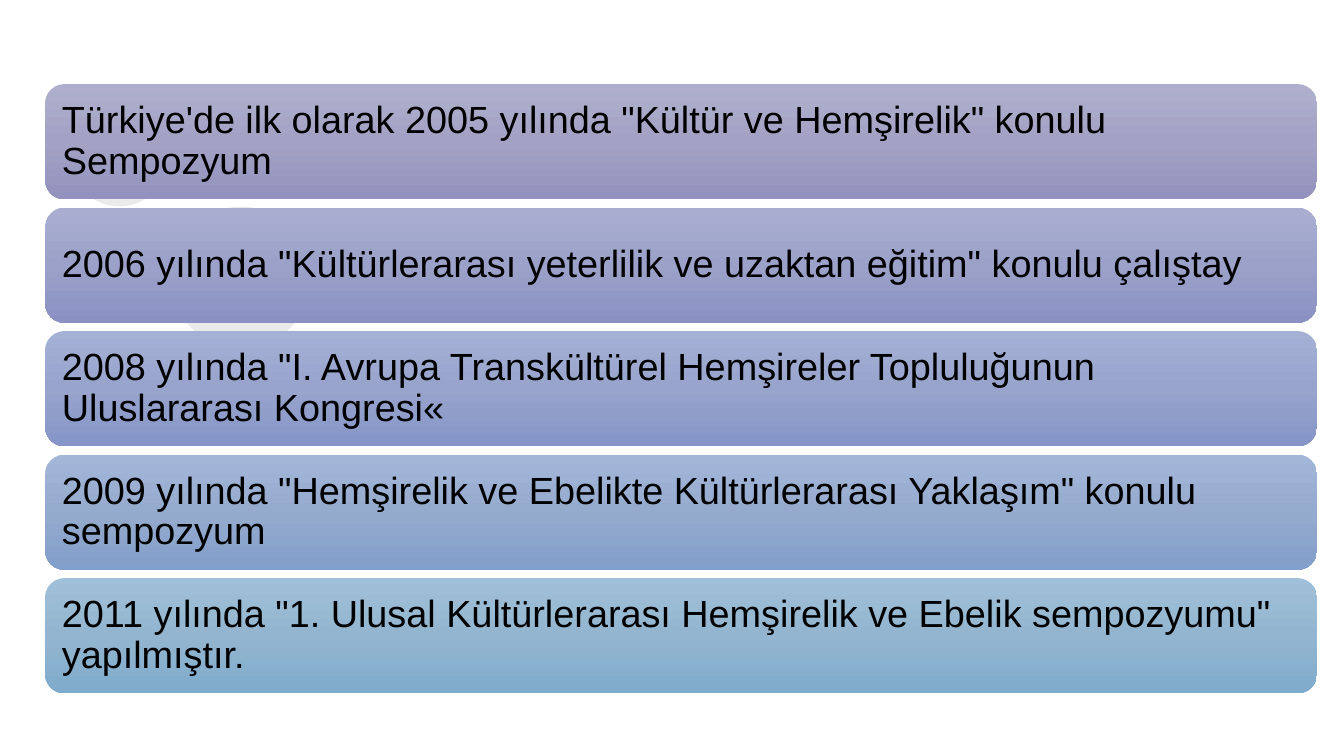
from copy import deepcopy
from dataclasses import dataclass

from pptx import Presentation
from pptx.dml.color import RGBColor
from pptx.enum.shapes import MSO_SHAPE as Shape
from pptx.enum.text import MSO_ANCHOR as Anchor, PP_ALIGN as Align
from pptx.oxml.ns import qn
from pptx.util import Cm, Pt


@dataclass(frozen=True)
class Theme:
    font: str = "Arial"
    text_size: float = 27
    text: str = "000000"
    circle: str = "EAEAEA"
    # Top, middle and bottom colour of each bar
    bars: tuple = (
        ("AFAFCD", "A3A2C4", "9392BE"),
        ("A9AED1", "9CA1C9", "8B91C3"),
        ("A5B0D5", "98A4CC", "8595C7"),
        ("A2B6D8", "95ABCD", "829ECA"),
        ("A0C0D9", "93B5CF", "7FABCC"),
    )


THEME = Theme()

EVENTS = (
    'Türkiye\'de ilk olarak 2005 yılında "Kültür ve Hemşirelik" konulu Sempozyum',
    '2006 yılında "Kültürlerarası yeterlilik ve uzaktan eğitim" konulu çalıştay',
    '2008 yılında "I. Avrupa Transkültürel Hemşireler Topluluğunun Uluslararası Kongresi«',
    '2009 yılında "Hemşirelik ve Ebelikte Kültürlerarası Yaklaşım" konulu sempozyum',
    '2011 yılında "1. Ulusal Kültürlerarası Hemşirelik ve Ebelik sempozyumu" yapılmıştır.',
)


def add_plain_shape(slide, kind, left, top, width, height):
    """Add a preset shape without outline or shadow; lengths in cm."""
    shape = slide.shapes.add_shape(kind, Cm(left), Cm(top), Cm(width), Cm(height))
    shape.shadow.inherit = False
    shape.line.fill.background()
    return shape


def fill_downward(shape, colours):
    """Fill a shape with a three-colour gradient from top to bottom."""
    fill = shape.fill
    fill.gradient()
    fill.gradient_angle = 270
    stop_list = shape.element.spPr.find(qn("a:gradFill")).find(qn("a:gsLst"))
    stop_list.insert(1, deepcopy(stop_list[0]))
    for stop, position, colour in zip(fill.gradient_stops, (0, 0.5, 1), colours):
        stop.position = position
        stop.color.rgb = RGBColor.from_string(colour)


def add_circles(slide, left, top):
    """Place the two background circles relative to the given corner."""
    for x, y, diameter in ((2.51, 2.47, 3.56), (0, 0, 2.46)):
        circle = add_plain_shape(
            slide, Shape.OVAL, left + x, top + y, diameter, diameter)
        circle.fill.solid()
        circle.fill.fore_color.rgb = RGBColor.from_string(THEME.circle)


def add_bar(slide, left, top, width, height, text, colours):
    """Draw one event as a rounded bar with its text."""
    bar = add_plain_shape(slide, Shape.ROUNDED_RECTANGLE, left, top, width, height)
    fill_downward(bar, colours)

    frame = bar.text_frame
    frame.word_wrap = True
    frame.vertical_anchor = Anchor.MIDDLE
    frame.margin_left = frame.margin_right = Cm(0.28)
    frame.margin_top = frame.margin_bottom = Cm(0.28)

    paragraph = frame.paragraphs[0]
    paragraph.text = text
    paragraph.alignment = Align.LEFT
    paragraph.line_spacing = 0.9
    paragraph.font.name = THEME.font
    paragraph.font.size = Pt(THEME.text_size)
    paragraph.font.color.rgb = RGBColor.from_string(THEME.text)


def add_event_list(slide, left, top, width, height, gap=0.21):
    """Stack the events with equal gaps in the given box."""
    bar_height = (height + gap) / len(EVENTS) - gap
    for index, (text, colours) in enumerate(zip(EVENTS, THEME.bars)):
        bar_top = top + index * (bar_height + gap)
        add_bar(slide, left, bar_top, width, bar_height, text, colours)


def main():
    presentation = Presentation()
    presentation.slide_width = Cm(33.87)
    presentation.slide_height = Cm(19.05)
    slide = presentation.slides.add_slide(presentation.slide_layouts[6])

    # Background circles, then the bars over them
    add_circles(slide, left=1.78, top=2.74)
    add_event_list(slide, left=1.14, top=2.12, width=32.05, height=15.35)

    presentation.save("out.pptx")


if __name__ == "__main__":
    main()
